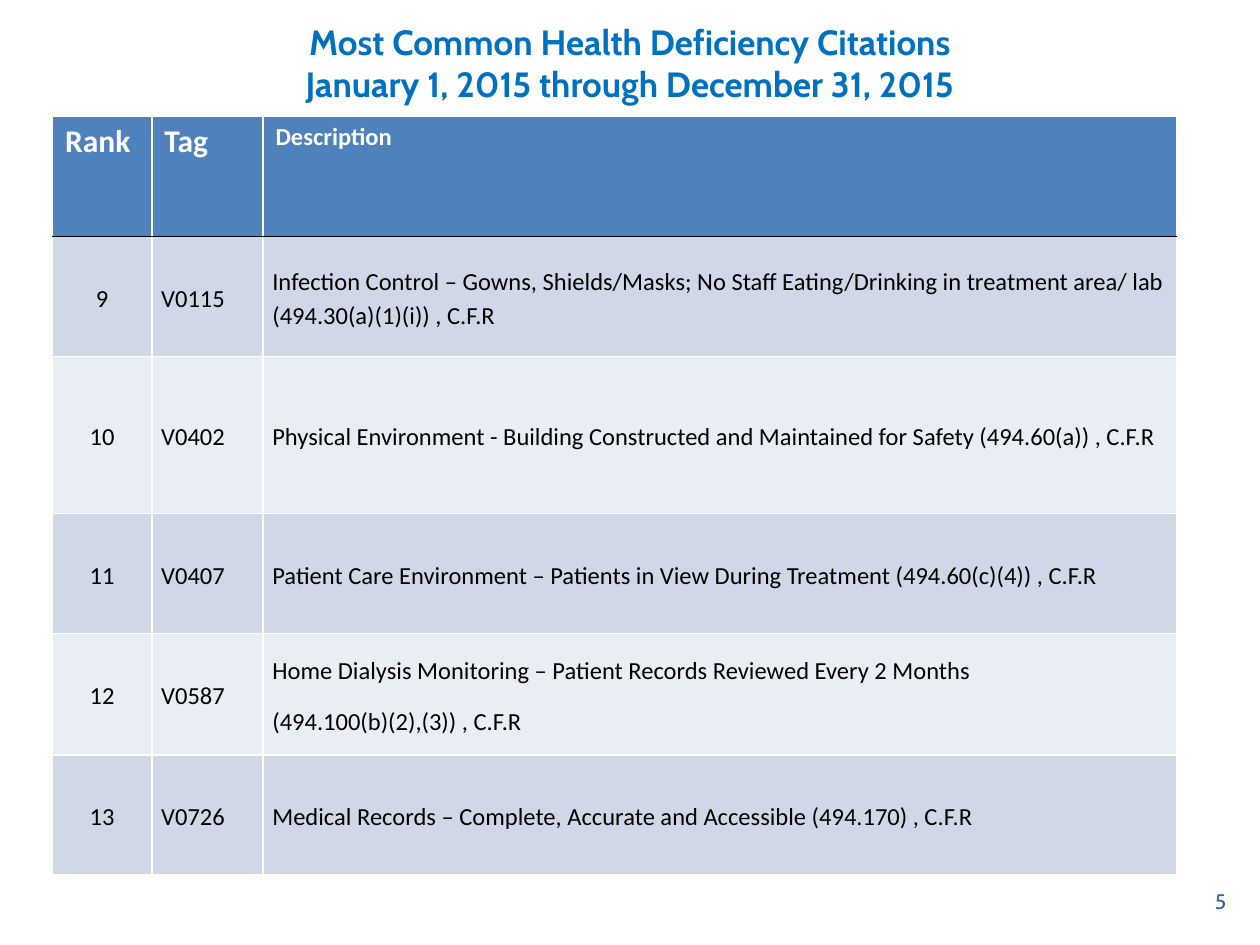
import pptx
import pptx.dml.color
import pptx.enum.text
import pptx.util
from lxml import etree

Cm = pptx.util.Cm
Pt = pptx.util.Pt
RGB = pptx.dml.color.RGBColor
ALIGN = pptx.enum.text.PP_ALIGN
MID = pptx.enum.text.MSO_ANCHOR.MIDDLE
NS = "http://schemas.openxmlformats.org/drawingml/2006/main"

WHITE = RGB(0xFF, 0xFF, 0xFF)
BLACK = RGB(0, 0, 0)
TITLE = RGB(0x00, 0x70, 0xC0)
PAGE = RGB(0x37, 0x60, 0x92)
HEAD = RGB(0x4F, 0x81, 0xBD)
BANDS = [RGB(0xE9, 0xED, 0xF4), RGB(0xD0, 0xD8, 0xE8)]


def style(para, name, size, color, bold):
    for run in para.runs:
        run.font.name = name
        run.font.size = Pt(size)
        run.font.color.rgb = color
        run.font.bold = bold


def edge(cell, side, color):
    props = cell._tc.get_or_add_tcPr()
    line = etree.SubElement(props, f"{{{NS}}}ln{side}", w=str(Pt(1)))
    fill = etree.SubElement(line, f"{{{NS}}}solidFill")
    etree.SubElement(fill, f"{{{NS}}}srgbClr", val=str(color))


deck = pptx.Presentation()
deck.slide_width = Cm(25.4)
deck.slide_height = Cm(19.05)
slide = deck.slides.add_slide(deck.slide_layouts[6])

labels = [
    ("Most Common Health Deficiency Citations\vJanuary 1, 2015 through December 31, 2015",
     (1.27, 0, 22.86, 2.54), ALIGN.CENTER, 20, TITLE, True),
    ("5", (19.05, 17.65, 5.92, 1.02), ALIGN.RIGHT, 12, PAGE, False),
]
for text, place, align, size, color, bold in labels:
    box = slide.shapes.add_textbox(*[Cm(n) for n in place])
    frame = box.text_frame
    frame.word_wrap = True
    frame.vertical_anchor = MID
    frame.text = text
    para = frame.paragraphs[0]
    para.alignment = align
    style(para, "Cabin", size, color, bold)

rows = [
    ("Rank", "Tag", "Description"),
    ("9", "V0115", "Infection Control – Gowns, Shields/Masks; No Staff Eating/Drinking in treatment area/ lab (494.30(a)(1)(i)) , C.F.R"),
    ("10", "V0402", "Physical Environment - Building Constructed and Maintained for Safety (494.60(a)) , C.F.R"),
    ("11", "V0407", "Patient Care Environment – Patients in View During Treatment (494.60(c)(4)) , C.F.R"),
    ("12", "V0587", "Home Dialysis Monitoring – Patient Records Reviewed Every 2 Months\n(494.100(b)(2),(3)) , C.F.R"),
    ("13", "V0726", "Medical Records – Complete, Accurate and Accessible (494.170) , C.F.R"),
]
widths = [2, 2.24, 18.42]
heights = [2.43, 2.42, 3.16, 2.42, 2.45, 2.42]
table = slide.shapes.add_table(
    len(rows), len(widths), Cm(1.06), Cm(2.34), Cm(sum(widths)), Cm(sum(heights))).table
for col, width in zip(table.columns, widths):
    col.width = Cm(width)
for row, height in zip(table.rows, heights):
    row.height = Cm(height)

for r, row in enumerate(rows):
    for c, text in enumerate(row):
        cell = table.cell(r, c)
        for side in "LRTB":
            dark = (r, side) in [(0, "B"), (1, "T")]
            edge(cell, side, BLACK if dark else WHITE)
        cell.fill.solid()
        cell.fill.fore_color.rgb = BANDS[r % 2] if r else HEAD
        cell.text_frame.text = text
        if r:
            cell.vertical_anchor = MID
            cell.margin_left = cell.margin_right = Cm(0.19)
            cell.margin_top = cell.margin_bottom = 0
        for para in cell.text_frame.paragraphs:
            if r:
                para.line_spacing = 1.15
                para.space_after = Pt(10)
                para.alignment = ALIGN.LEFT if c else ALIGN.CENTER
                style(para, "Calibri", 14, BLACK, False)
            else:
                style(para, "Calibri", 14 if c == 2 else 18, WHITE, True)

deck.save("out.pptx")
